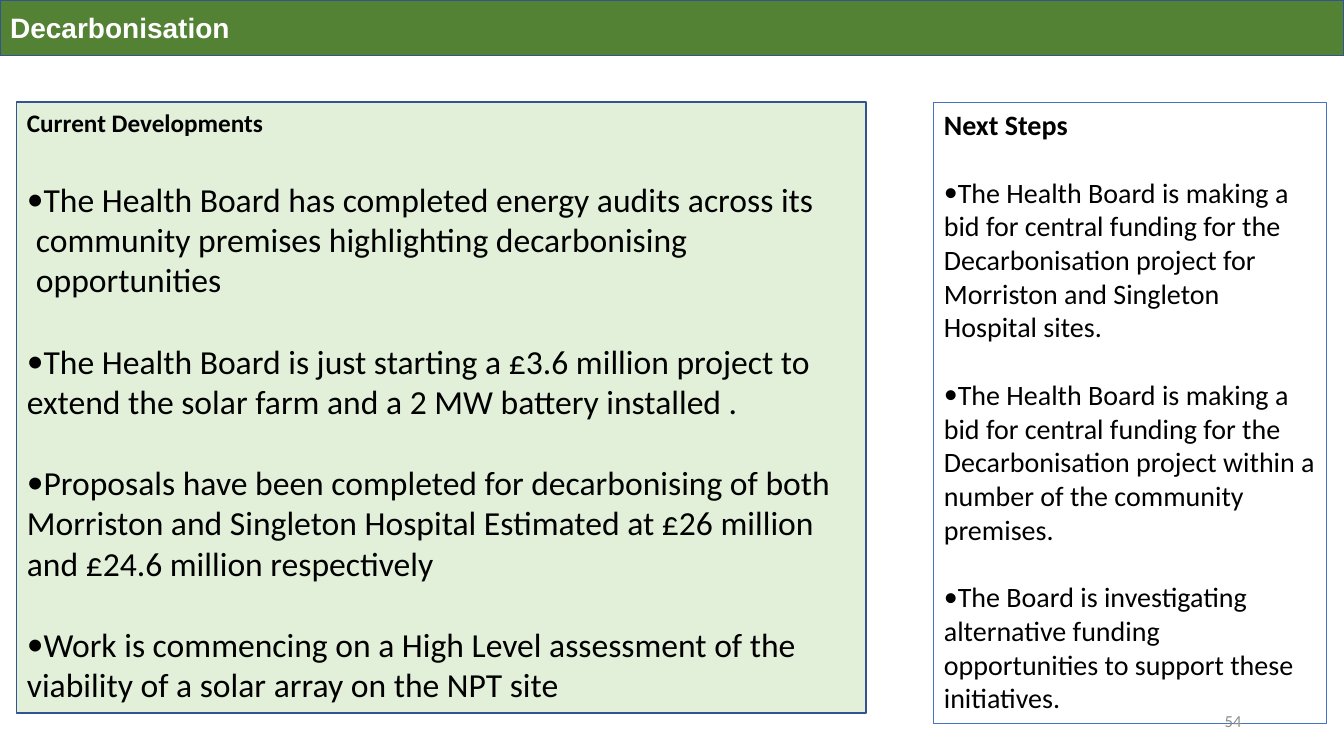
from dataclasses import dataclass

from lxml.etree import SubElement
from pptx import Presentation
from pptx.dml.color import RGBColor
from pptx.enum.text import MSO_ANCHOR, MSO_AUTO_SIZE, PP_ALIGN
from pptx.oxml.ns import qn
from pptx.util import Pt


@dataclass(frozen=True)
class Theme:
    green: str = "548235"
    pale: str = "E2F0D9"
    navy: str = "325491"
    blue: str = "4472C4"
    white: str = "FFFFFF"
    black: str = "000000"
    grey: str = "8C8C8C"
    head: str = "Arial"
    body: str = "Calibri"
    large: int = 24
    mid: int = 20
    small: int = 18
    tiny: int = 12


THEME = Theme()
LEADING = 1.22  # line height of the body font, in ems

# Each item is its hanging indent in points and its text.
CURRENT = [
    (6.5, "The Health Board has completed energy audits across its community "
          "premises highlighting decarbonising opportunities"),
    (0, "The Health Board is just starting a £3.6 million project to extend "
        "the solar farm and a 2 MW battery installed ."),
    (0, "Proposals have been completed for decarbonising of both Morriston and "
        "Singleton Hospital Estimated at £26 million and £24.6 million "
        "respectively"),
    (0, "Work is commencing on a High Level assessment of the viability of a "
        "solar array on the NPT site"),
]
NEXT = [
    (0, "The Health Board is making a bid for central funding for the "
        "Decarbonisation project for Morriston and Singleton Hospital sites."),
    (0, "The Health Board is making a bid for central funding for the "
        "Decarbonisation project within a number of the community premises."),
    (0, "The Board is investigating alternative funding opportunities to "
        "support these initiatives."),
]


def place(shape, left, top, width, height):
    shape.left, shape.top = Pt(left), Pt(top)
    shape.width, shape.height = Pt(width), Pt(height)


def paint(shape, fill, line, weight):
    if fill:
        shape.fill.solid()
        shape.fill.fore_color.rgb = RGBColor.from_string(fill)
    else:
        shape.fill.background()
    shape.line.color.rgb = RGBColor.from_string(line)
    shape.line.width = Pt(weight)


def add_run(para, text, size, color, face, bold=False):
    run = para.add_run()
    run.text = text
    font = run.font
    font.name, font.size, font.bold = face, Pt(size), bold
    font.color.rgb = RGBColor.from_string(color)


def set_bullet(para, hang=0, mark=None):
    """Set the hanging indent and the bullet sign, or no bullet."""
    props = para._p.get_or_add_pPr()
    props.set("marL", str(Pt(hang)))
    props.set("indent", str(-Pt(hang)))
    if mark:
        SubElement(props, qn("a:buFont")).set("typeface", THEME.body)
        SubElement(props, qn("a:buChar")).set("char", mark)
    else:
        SubElement(props, qn("a:buNone"))


def fill_panel(panel, title, size, items, item_size):
    frame = panel.text_frame
    frame.auto_size = MSO_AUTO_SIZE.NONE
    head = frame.paragraphs[0]
    set_bullet(head)
    head.space_before = Pt(0)
    add_run(head, title, size, THEME.black, THEME.body, True)
    for hang, text in items:
        para = frame.add_paragraph()
        set_bullet(para, hang, "•")
        para.space_before = Pt(item_size * LEADING)
        add_run(para, text, item_size, THEME.black, THEME.body)


def fill_title(title, text):
    frame = title.text_frame
    frame.auto_size = MSO_AUTO_SIZE.NONE
    frame.vertical_anchor = MSO_ANCHOR.MIDDLE
    para = frame.paragraphs[0]
    para.alignment = PP_ALIGN.LEFT
    add_run(para, text, THEME.mid, THEME.white, THEME.head, True)


def add_number(slide, text):
    box = slide.shapes.add_textbox(Pt(678), Pt(500.5), Pt(216), Pt(28.75))
    frame = box.text_frame
    frame.word_wrap = True
    frame.vertical_anchor = MSO_ANCHOR.MIDDLE
    para = frame.paragraphs[0]
    para.alignment = PP_ALIGN.RIGHT
    add_run(para, text, THEME.tiny, THEME.grey, THEME.body)


def main():
    deck = Presentation()
    deck.slide_width, deck.slide_height = Pt(960), Pt(540)
    slide = deck.slides.add_slide(deck.slide_layouts.get_by_name("Two Content"))
    title, left, right = slide.placeholders

    place(title, 0, 0, 960, 39.5)
    paint(title, THEME.green, THEME.navy, 1)
    fill_title(title, "Decarbonisation")

    place(left, 12, 73, 606.5, 436.25)
    paint(left, THEME.pale, THEME.navy, 1)
    fill_panel(left, "Current Developments", THEME.small, CURRENT, THEME.large)

    place(right, 667, 73.25, 280.5, 443.5)
    paint(right, None, THEME.blue, 0.5)
    fill_panel(right, "Next Steps", THEME.mid, NEXT, THEME.mid)

    add_number(slide, "54")
    deck.save("out.pptx")


if __name__ == "__main__":
    main()
